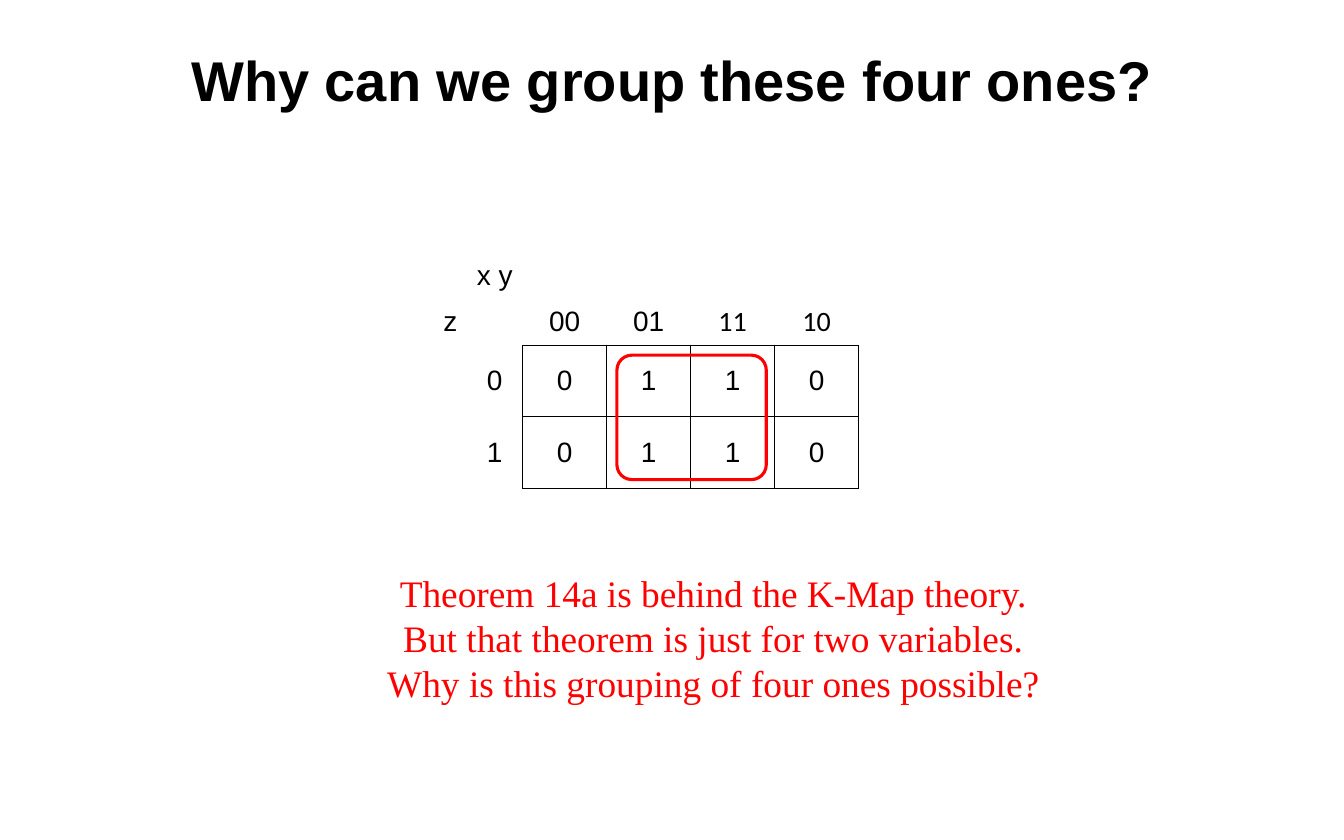
"""Build a slide on grouping four ones in a Karnaugh map."""
from lxml.etree import SubElement
from pptx import Presentation
from pptx.dml.color import RGBColor
from pptx.enum.shapes import MSO_SHAPE
from pptx.enum.text import MSO_ANCHOR, MSO_AUTO_SIZE, PP_ALIGN
from pptx.oxml.ns import qn
from pptx.util import Pt


def color(code):
    return RGBColor.from_string(code)


def style(frame, face, size, code, bold=False):
    for para in frame.paragraphs:
        para.alignment = PP_ALIGN.CENTER
        para.font.size = Pt(size)
        for run in para.runs:
            run.font.name = face
            run.font.size = Pt(size)
            run.font.bold = bold
            run.font.color.rgb = color(code)


deck = Presentation()
deck.slide_width, deck.slide_height = Pt(864), Pt(540)
slide = deck.slides.add_slide(deck.slide_layouts[6])
shapes = slide.shapes

title = shapes.add_textbox(Pt(0), Pt(24), Pt(864), Pt(54)).text_frame
title.word_wrap = True
title.vertical_anchor = MSO_ANCHOR.MIDDLE
title.text = "Why can we group these four ones?"
style(title, "Arial", 36, "000000", True)

rows = [
    ["", "x y", "", "", "", ""],
    ["z", "", "00", "01", "11", "10"],
    ["", "0", "0", "1", "1", "0"],
    ["", "1", "0", "1", "1", "0"],
]
wide = [36, 36, 54, 54, 54, 54]
high = [30, 30, 46, 46]
sides = {"lnL": (0, -1), "lnR": (0, 1), "lnT": (-1, 0), "lnB": (1, 0)}
ones = {(r, c) for r in (2, 3) for c in (2, 3, 4, 5)}

table = shapes.add_table(4, 6, Pt(264), Pt(162), Pt(sum(wide)), Pt(sum(high))).table
table.first_row = table.horz_banding = False
for col, size in zip(table.columns, wide):
    col.width = Pt(size)
for row, size in zip(table.rows, high):
    row.height = Pt(size)

for r, row in enumerate(rows):
    for c, text in enumerate(row):
        cell = table.cell(r, c)
        cell.margin_left = cell.margin_right = 0
        cell.margin_top = cell.margin_bottom = 0
        cell.vertical_anchor = MSO_ANCHOR.MIDDLE
        cell.text_frame.text = text
        face = "Calibri" if text in ("11", "10") else "Arial"
        style(cell.text_frame, face, 18, "000000")
        props = cell._tc.get_or_add_tcPr()
        for side, (down, right) in sides.items():
            dark = ones & {(r, c), (r + down, c + right)}
            line = SubElement(props, qn("a:" + side), w=str(Pt(1)))
            fill = SubElement(line, qn("a:solidFill"))
            SubElement(fill, qn("a:srgbClr"), val="000000" if dark else "FFFFFF")
        cell.fill.solid()
        cell.fill.fore_color.rgb = color("FFFFFF")
table.cell(1, 0).margin_left = Pt(15)

loop = shapes.add_shape(
    MSO_SHAPE.ROUNDED_RECTANGLE, Pt(404.6), Pt(220.3), Pt(80), Pt(96)
)
loop.rotation = 270
loop.adjustments[0] = 0.12
loop.shadow.inherit = False
loop.fill.background()
loop.line.color.rgb = color("FF0000")
loop.line.width = Pt(2)

note = shapes.add_textbox(Pt(238.5), Pt(363), Pt(440), Pt(94)).text_frame
note.word_wrap = False
note.auto_size = MSO_AUTO_SIZE.SHAPE_TO_FIT_TEXT
note.text = "\n".join([
    "Theorem 14a is behind the K-Map theory.",
    "But that theorem is just for two variables.",
    "Why is this grouping of four ones possible?",
])
style(note, "Times New Roman", 24, "FF0000")

deck.save("out.pptx")
